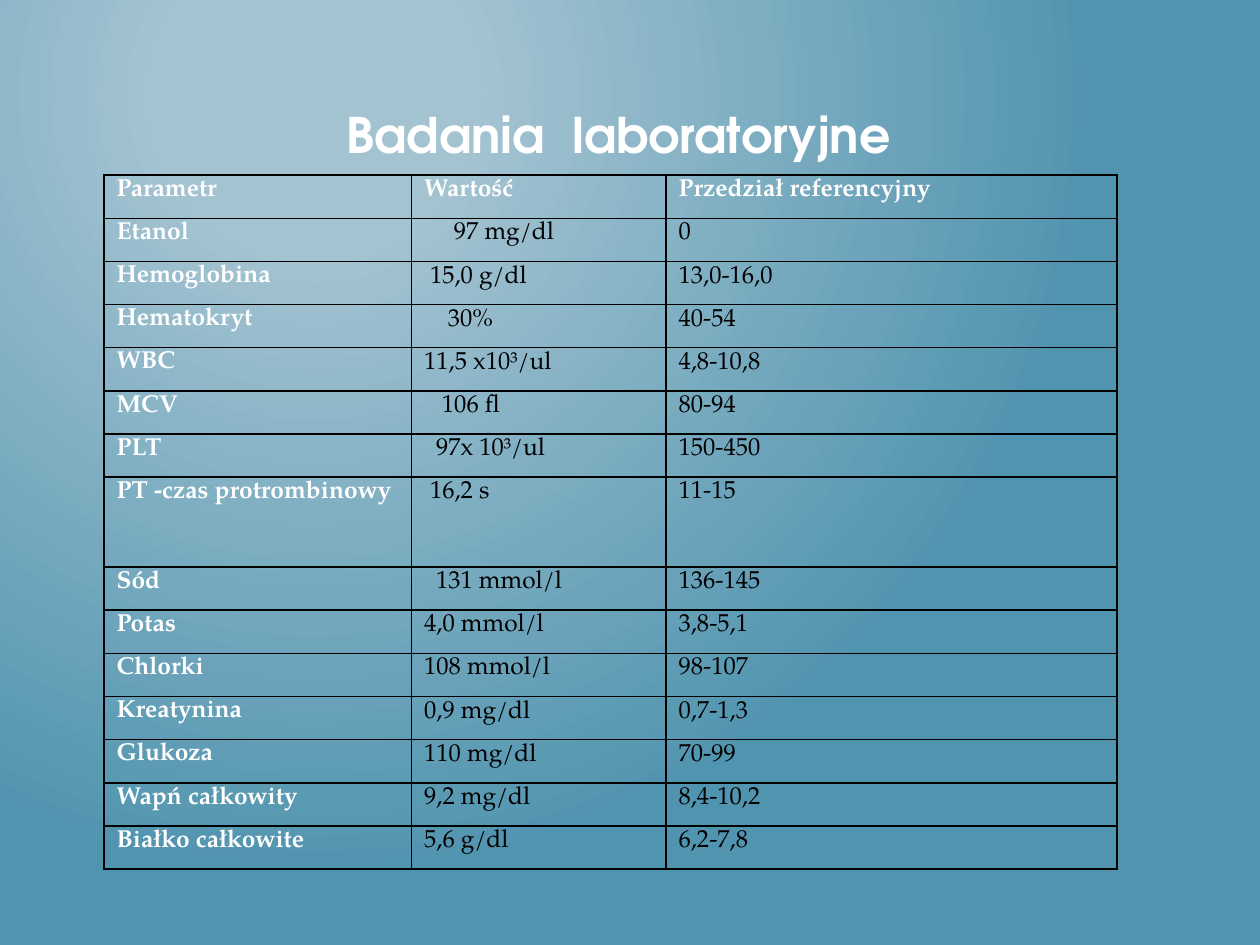
from lxml import etree
from pptx import Presentation
from pptx.dml.color import RGBColor
from pptx.enum.text import MSO_ANCHOR, PP_ALIGN
from pptx.oxml import parse_xml
from pptx.oxml.ns import nsdecls, qn
from pptx.util import Cm, Pt

WHITE = RGBColor(0xFF, 0xFF, 0xFF)
BLACK = RGBColor(0, 0, 0)
LIGHT_BLUE = RGBColor(0xA3, 0xC3, 0xD1)
BLUE = RGBColor(0x51, 0x94, 0xAF)
TITLE_FONT = "TeX Gyre Adventor"
BODY_FONT = "TeX Gyre Pagella"

# Parameter, value, reference range, indent steps of the value
ROWS = [
    ("Parametr", "Wartość", "Przedział referencyjny", 0),
    ("Etanol", "97 mg/dl", "0", 5),
    ("Hemoglobina", "15,0 g/dl", "13,0-16,0", 1),
    ("Hematokryt", "30%", "40-54", 4),
    ("WBC", "11,5 x10³/ul", "4,8-10,8", 0),
    ("MCV", "106 fl", "80-94", 3),
    ("PLT", "97x 10³/ul", "150-450", 2),
    ("PT -czas protrombinowy", "16,2 s", "11-15", 1),
    ("Sód", "131 mmol/l", "136-145", 2),
    ("Potas", "4,0 mmol/l", "3,8-5,1", 0),
    ("Chlorki", "108 mmol/l", "98-107", 0),
    ("Kreatynina", "0,9 mg/dl", "0,7-1,3", 0),
    ("Glukoza", "110 mg/dl", "70-99", 0),
    ("Wapń całkowity", "9,2 mg/dl", "8,4-10,2", 0),
    ("Białko całkowite", "5,6 g/dl", "6,2-7,8", 0),
]
TALL_ROW = 7


def format_run(r, font, size, color, bold):
    r.font.name = font
    r.font.size = Pt(size)
    r.font.color.rgb = color
    r.font.bold = bold


def add_borders(cell):
    tcPr = cell._tc.get_or_add_tcPr()
    for i, side in enumerate(("lnL", "lnR", "lnT", "lnB")):
        tcPr.insert(i, parse_xml(
            f'<a:{side} {nsdecls("a")} w="{Pt(1)}"><a:solidFill>'
            f'<a:srgbClr val="{BLACK}"/></a:solidFill></a:{side}>'))


prs = Presentation()
prs.slide_width, prs.slide_height = Cm(25.4), Cm(19.05)
s = prs.slides.add_slide(prs.slide_layouts[5])

# Background: radial gradient
fill = s.background.fill
fill.gradient()
for stop, color, position in zip(fill.gradient_stops, (LIGHT_BLUE, BLUE), (0.2, 1)):
    stop.color.rgb = color
    stop.position = position
grad = s.background._cSld.find(".//" + qn("a:gradFill"))
grad.remove(grad.find(qn("a:lin")))
path = etree.SubElement(grad, qn("a:path"), {"path": "circle"})
etree.SubElement(path, qn("a:fillToRect"),
                 {"l": "50000", "t": "20000", "r": "100000", "b": "100000"})

# Title
title = s.shapes.title
title.left, title.top, title.width, title.height = Cm(2.31), Cm(0.91), Cm(21.9), Cm(2.51)
tf = title.text_frame
tf.text = "Badania  laboratoryjne"
tf.vertical_anchor = MSO_ANCHOR.BOTTOM
tf.margin_left = Cm(4.67)
p = tf.paragraphs[0]
p.alignment = PP_ALIGN.LEFT
format_run(p.runs[0], TITLE_FONT, 28, WHITE, True)

# Table of results
table = s.shapes.add_table(len(ROWS), 3, Cm(2.1), Cm(3.53), Cm(20.42), Cm(13.99)).table
table.horz_banding = False
table.first_row = False
for col, width in zip(table.columns, (6.2, 5.13, 9.09)):
    col.width = Cm(width)

for i, (*texts, steps) in enumerate(ROWS):
    table.rows[i].height = Cm(1.81 if i == TALL_ROW else 0.87)
    for j, text in enumerate(texts):
        cell = table.cell(i, j)
        cell.text = text
        cell.fill.background()
        cell.margin_left = Cm(0.25 + (0.12 * steps if j == 1 else 0))
        cell.margin_right = Cm(0.25)
        cell.margin_top = cell.margin_bottom = 0
        add_borders(cell)
        p = cell.text_frame.paragraphs[0]
        p.line_spacing = 1.15
        heading = i == 0 or j == 0
        format_run(p.runs[0], BODY_FONT, 14, WHITE if heading else BLACK, heading)

prs.save("out.pptx")
